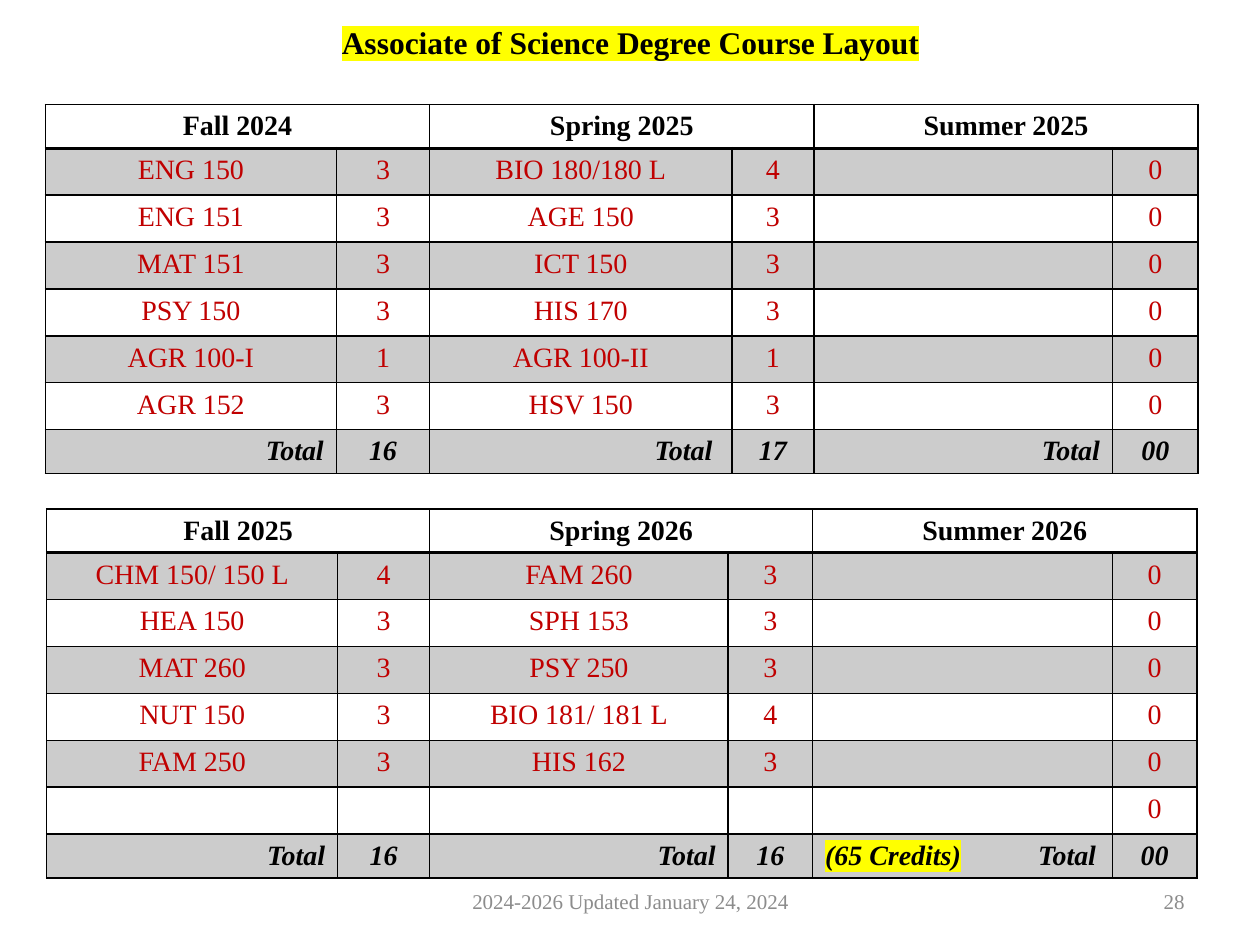
from lxml.etree import SubElement
from pptx import Presentation
from pptx.dml.color import RGBColor
from pptx.enum.text import MSO_ANCHOR, PP_ALIGN
from pptx.oxml import parse_xml
from pptx.oxml.ns import nsdecls, qn
from pptx.util import Inches, Pt

FONT = "Times New Roman"
COLORS = {
    "text": "000000",
    "course": "C00000",
    "band": "CCCCCC",
    "muted": "8C8C8C",
    "highlight": "FFFF00",
}
ROW_HEIGHT = 0.34

FIRST_YEAR = [
    ["Fall 2024", "", "Spring 2025", "", "Summer 2025", ""],
    ["ENG 150", "3", "BIO 180/180 L", "4", "", "0"],
    ["ENG 151", "3", "AGE 150", "3", "", "0"],
    ["MAT 151", "3", "ICT 150", "3", "", "0"],
    ["PSY 150", "3", "HIS 170", "3", "", "0"],
    ["AGR 100-I", "1", "AGR 100-II", "1", "", "0"],
    ["AGR 152", "3", "HSV 150", "3", "", "0"],
    ["Total", "16", "Total ", "17", "Total", "00"],
]
SECOND_YEAR = [
    ["Fall 2025", "", "Spring 2026", "", "Summer 2026", ""],
    ["CHM 150/ 150 L", "4", "FAM 260", "3", "", "0"],
    ["HEA 150", "3", "SPH 153", "3", "", "0"],
    ["MAT 260", "3", "PSY 250", "3", "", "0"],
    ["NUT 150", "3", "BIO 181/ 181 L", "4", "", "0"],
    ["FAM 250", "3", "HIS 162", "3", "", "0"],
    ["", "", "", "", "", "0"],
    ["Total", "16", "Total", "16", "", "00"],
]


def rgb(name):
    return RGBColor.from_string(COLORS[name])


def format_run(r, size, color, bold=False, italic=False):
    r.font.size = Pt(size)
    r.font.name = FONT
    r.font.bold = bold
    r.font.italic = italic
    r.font.color.rgb = rgb(color)


def highlight(r):
    fill = r.font._element.find(qn("a:solidFill"))
    fill.addnext(parse_xml(
        f'<a:highlight {nsdecls("a")}>'
        f'<a:srgbClr val="{COLORS["highlight"]}"/></a:highlight>'))


def set_border(cell, side, width):
    tcPr = cell._tc.get_or_add_tcPr()
    tcPr.append(parse_xml(
        f'<a:{side} {nsdecls("a")} w="{Pt(width)}"><a:solidFill>'
        f'<a:srgbClr val="{COLORS["text"]}"/></a:solidFill></a:{side}>'))


def format_cell(cell, text, row, col, last):
    set_border(cell, "lnL", 1)
    set_border(cell, "lnR", 1)
    set_border(cell, "lnT", 2 if row == 1 else 1)
    set_border(cell, "lnB", 2 if row == 0 else 1)
    if row % 2:
        cell.fill.solid()
        cell.fill.fore_color.rgb = rgb("band")
    else:
        cell.fill.background()
    p = cell.text_frame.paragraphs[0]
    is_total = row == last
    p.alignment = PP_ALIGN.RIGHT if is_total and col % 2 == 0 else PP_ALIGN.CENTER
    if text:
        p.text = text
        is_course = 0 < row < last
        format_run(p.runs[0], 16, "course" if is_course else "text",
                   not is_course, is_total)
    else:
        SubElement(p._p, qn("a:endParaRPr"), sz="1600")


def add_schedule(s, left, top, widths, rows):
    shape = s.shapes.add_table(
        len(rows), len(widths), Inches(left), Inches(top),
        Inches(sum(widths)), Inches(ROW_HEIGHT * len(rows)))
    table = shape.table
    table.first_row = False
    table.horz_banding = False
    for column, width in zip(table.columns, widths):
        column.width = Inches(width)
    for i, values in enumerate(rows):
        table.rows[i].height = Inches(ROW_HEIGHT)
        for j, text in enumerate(values):
            format_cell(table.cell(i, j), text, i, j, len(rows) - 1)
    for j in range(0, len(widths), 2):
        table.cell(0, j).merge(table.cell(0, j + 1))
    return table


def add_credit_total(cell):
    p = cell.text_frame.paragraphs[0]
    p.alignment = PP_ALIGN.LEFT
    tabs = SubElement(p._p.get_or_add_pPr(), qn("a:tabLst"))
    SubElement(tabs, qn("a:tab"), pos=str(Inches(1.69)), algn="l")
    for text in ("(65 Credits)\t", "Total"):
        r = p.add_run()
        r.text = text
        format_run(r, 16, "text", True, True)
    highlight(p.runs[0])


def add_title(s, text):
    sp = s.shapes.title
    sp.left, sp.top = Inches(2.26), Inches(0.13)
    sp.width, sp.height = Inches(5.49), Inches(0.4)
    tf = sp.text_frame
    tf.text = text
    tf.word_wrap = True
    tf.vertical_anchor = MSO_ANCHOR.TOP
    p = tf.paragraphs[0]
    p.alignment = PP_ALIGN.CENTER
    format_run(p.runs[0], 18, "text", True)
    highlight(p.runs[0])


def add_footer(s, left, width, text, alignment):
    sp = s.shapes.add_textbox(Inches(left), Inches(6.95), Inches(width), Inches(0.4))
    tf = sp.text_frame
    tf.text = text
    tf.word_wrap = True
    tf.vertical_anchor = MSO_ANCHOR.MIDDLE
    p = tf.paragraphs[0]
    p.alignment = alignment
    format_run(p.runs[0], 12, "muted")


def main():
    prs = Presentation()
    prs.slide_width = Inches(10)
    prs.slide_height = Inches(7.5)
    s = prs.slides.add_slide(prs.slide_layouts[5])
    add_title(s, "Associate of Science Degree Course Layout")
    add_schedule(s, 0.36, 0.83, [2.31, 0.74, 2.4, 0.65, 2.37, 0.68], FIRST_YEAR)
    table = add_schedule(s, 0.37, 4.04, [2.31, 0.73, 2.37, 0.67, 2.38, 0.67], SECOND_YEAR)
    add_credit_total(table.cell(len(SECOND_YEAR) - 1, 4))
    add_footer(s, 3.42, 3.17, "2024-2026 Updated January 24, 2024", PP_ALIGN.CENTER)
    add_footer(s, 7.17, 2.33, "28", PP_ALIGN.RIGHT)
    prs.save("out.pptx")


if __name__ == "__main__":
    main()
